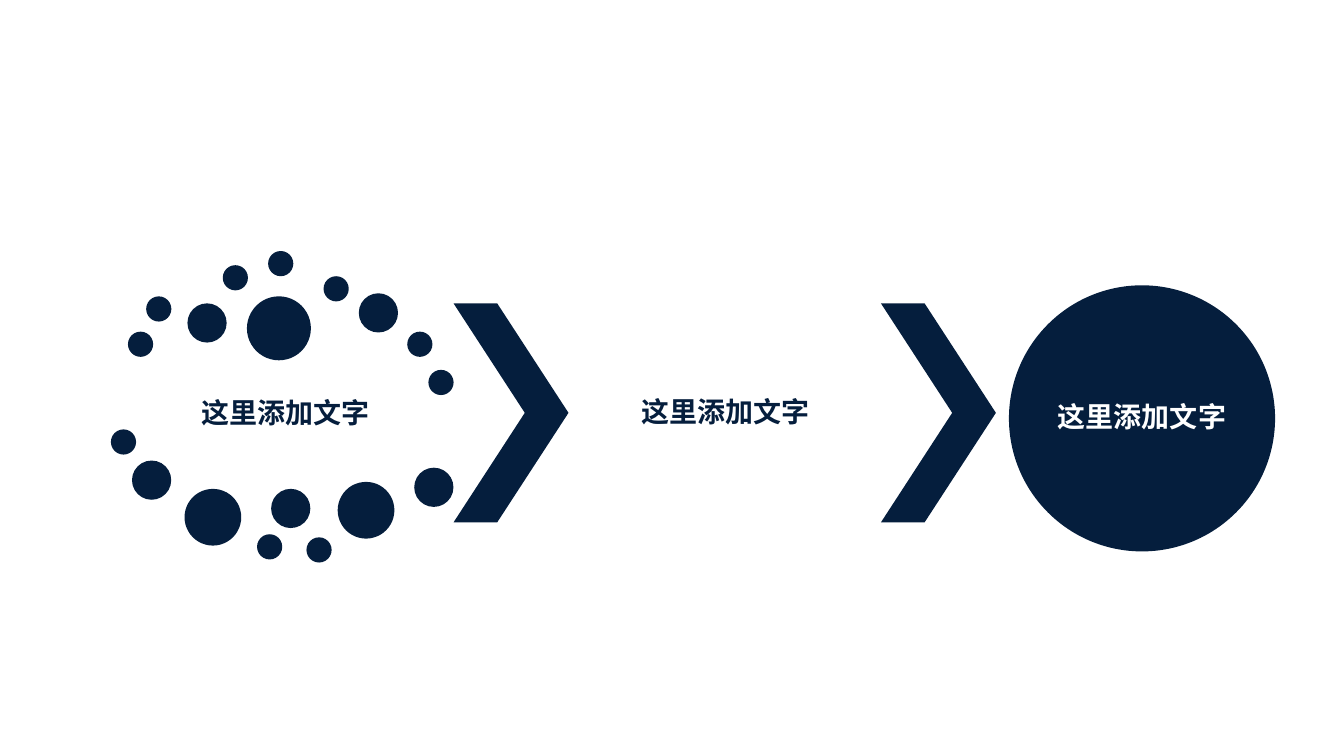
from dataclasses import dataclass

from lxml import etree
from pptx import Presentation
from pptx.dml.color import RGBColor
from pptx.enum.shapes import MSO_SHAPE
from pptx.enum.text import MSO_ANCHOR, PP_ALIGN
from pptx.oxml.ns import qn
from pptx.util import Pt

OVAL = MSO_SHAPE.OVAL
CHEVRON = MSO_SHAPE.CHEVRON
MIDDLE = MSO_ANCHOR.MIDDLE
CENTER = PP_ALIGN.CENTER


@dataclass(frozen=True)
class Theme:
    navy: RGBColor = RGBColor(0x05, 0x1E, 0x3D)
    white: RGBColor = RGBColor(0xFF, 0xFF, 0xFF)
    font: str = "Noto Sans CJK SC"
    size: int = 20


THEME = Theme()
LABEL = "这里添加文字"

# Left and top of each dot, in points, grouped by diameter
DOTS = {
    18: [(91.4, 236.9), (104.4, 211.7), (159.1, 189.4), (191.5, 179.3),
         (231.1, 197.3), (290.9, 236.9), (306, 264.2), (79.2, 306.7),
         (183.6, 381.6), (218.9, 383.8)],
    28: [(133.9, 216.7), (256.3, 209.5), (94.3, 329), (193.7, 349.2),
         (295.9, 334.1)],
    40.5: [(131.8, 349.2), (241.2, 344.2)],
    45.7: [(176.4, 211.7)],
}


def add_solid(slide, kind, left, top, width, height):
    """Add a navy shape without outline or shadow."""
    shape = slide.shapes.add_shape(
        kind, Pt(left), Pt(top), Pt(width), Pt(height))
    shape.shadow.inherit = False
    shape.fill.solid()
    shape.fill.fore_color.rgb = THEME.navy
    shape.line.fill.background()
    return shape


def set_label(shape, text, color, inset):
    """Write one bold line in the middle of a shape."""
    frame = shape.text_frame
    frame.text = text
    frame.word_wrap = True
    frame.vertical_anchor = MIDDLE
    frame.margin_left = frame.margin_right = Pt(inset)
    frame.margin_top = frame.margin_bottom = Pt(inset)
    line = frame.paragraphs[0]
    line.alignment = CENTER
    line.line_spacing = 0.9
    run = line.runs[0]
    font = run.font
    font.name = THEME.font
    font.size = Pt(THEME.size)
    font.bold = True
    font.color.rgb = color
    # Chinese text takes the East Asian typeface
    east = etree.SubElement(run._r.get_or_add_rPr(), qn("a:ea"))
    east.set("typeface", THEME.font)


def add_label(slide, left, top, width, height):
    box = slide.shapes.add_textbox(
        Pt(left), Pt(top), Pt(width), Pt(height))
    set_label(box, LABEL, THEME.navy, 2)


def add_dots(slide):
    for size, spots in DOTS.items():
        for left, top in spots:
            add_solid(slide, OVAL, left, top, size, size)


def add_arrow(slide, left):
    arrow = add_solid(slide, CHEVRON, left, 216.7, 82.1, 156.4)
    arrow.adjustments[0] = 0.62


def add_goal(slide):
    goal = add_solid(slide, OVAL, 720.7, 203.8, 190.1, 190.1)
    set_label(goal, LABEL, THEME.white, 2)


def main():
    deck = Presentation()
    deck.slide_width, deck.slide_height = Pt(960), Pt(540)
    slide = deck.slides.add_slide(deck.slide_layouts[6])

    # Scattered start
    add_label(slide, 92.2, 259.2, 223.2, 73.4)
    add_dots(slide)

    # Middle step between two arrows
    add_arrow(slide, 324)
    add_label(slide, 406.1, 216.7, 223.9, 157)
    add_arrow(slide, 629.3)

    # Result
    add_goal(slide)

    deck.save("out.pptx")


if __name__ == "__main__":
    main()
